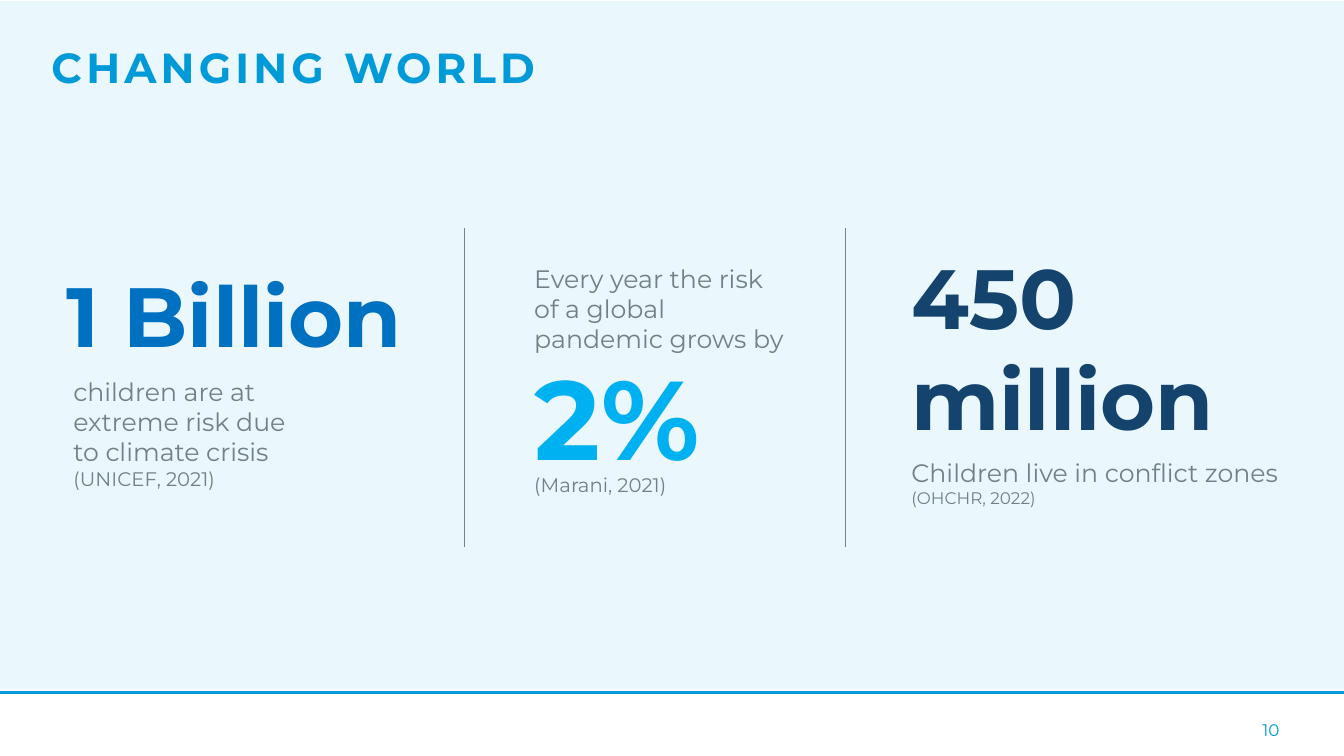
"""Build the Changing World slide with its three key figures."""
from dataclasses import dataclass

import pptx
import pptx.dml.color
import pptx.enum.shapes
import pptx.enum.text
import pptx.oxml.ns
import pptx.shapes.autoshape
import pptx.shapes.connector
import pptx.slide
import pptx.text.text
import pptx.util
from lxml import etree

Inches = pptx.util.Inches
Pt = pptx.util.Pt
RGBColor = pptx.dml.color.RGBColor
Align = pptx.enum.text.PP_ALIGN
Anchor = pptx.enum.text.MSO_ANCHOR

FONT = "Montserrat"
PANEL = RGBColor(0xEA, 0xF7, 0xFC)
ACCENT = RGBColor(0x00, 0x9A, 0xDA)
TITLE = RGBColor(0x00, 0x9A, 0xD9)
GREY = RGBColor(0x72, 0x80, 0x8A)
DIVIDER = RGBColor(0x80, 0x80, 0x80)
BLUE = RGBColor(0x00, 0x70, 0xC0)
NAVY = RGBColor(0x14, 0x44, 0x6D)
SKY = RGBColor(0x00, 0xB1, 0xF1)

SLIDE_WIDTH = 13.33
FOOTER_TOP = 6.87
DIVIDER_TOP, DIVIDER_BOTTOM = 2.26, 5.43
DIVIDER_LEFTS = (4.61, 8.39)


@dataclass(frozen=True)
class Line:
    text: str
    size: float
    color: RGBColor = GREY
    bold: bool = False
    space_before: float = 0


@dataclass(frozen=True)
class Block:
    left: float
    top: float
    width: float
    height: float
    lines: tuple[Line, ...]
    align: Align = Align.LEFT
    anchor: Anchor = Anchor.TOP


HEADING = Block(0.41, 0.36, 12.85, 0.61, (Line("CHANGING WORLD", 30, TITLE, True),))

BLOCKS = (
    Block(0.63, 3.68, 2.74, 1.25, (
        Line("children are at extreme risk due\vto climate crisis", 18),
        Line("(UNICEF, 2021)", 14))),
    Block(0.16, 2.56, 4.33, 1.11, (Line("1 Billion", 60, BLUE, True),),
          Align.CENTER, Anchor.MIDDLE),
    Block(8.94, 4.49, 4.11, 0.61, (
        Line("Children live in conflict zones", 18),
        Line("(OHCHR, 2022)", 12))),
    Block(8.94, 2.38, 3.89, 2.12, (Line("450 million", 60, NAVY, True),),
          anchor=Anchor.MIDDLE),
    Block(5.2, 2.56, 2.72, 2.42, (
        Line("Every year the risk of a global pandemic grows by", 18),
        Line("(Marani, 2021)", 14, space_before=85))),
    Block(4.85, 3.4, 2.54, 1.45, (Line("2%", 80, SKY, True),),
          Align.CENTER, Anchor.MIDDLE),
    Block(9.79, 7.04, 3, 0.4, (Line("10", 12, ACCENT),),
          Align.RIGHT, Anchor.MIDDLE),
)


def fill_frame(frame: pptx.text.text.TextFrame, block: Block) -> None:
    frame.text = "\n".join(line.text for line in block.lines)
    frame.word_wrap = True
    frame.auto_size = pptx.enum.text.MSO_AUTO_SIZE.NONE
    frame.vertical_anchor = block.anchor
    for para, line in zip(frame.paragraphs, block.lines):
        para.alignment = block.align
        para.space_before = Pt(line.space_before)
        for span in para.runs:
            span.font.name = FONT
            span.font.size = Pt(line.size)
            span.font.bold = line.bold
            span.font.color.rgb = line.color


def add_block(page: pptx.slide.Slide, block: Block) -> None:
    box = page.shapes.add_textbox(Inches(block.left), Inches(block.top),
                                  Inches(block.width), Inches(block.height))
    fill_frame(box.text_frame, block)


def set_title(page: pptx.slide.Slide, block: Block) -> None:
    title = page.shapes.title
    title.left, title.top = Inches(block.left), Inches(block.top)
    title.width, title.height = Inches(block.width), Inches(block.height)
    fill_frame(title.text_frame, block)
    for span in title.text_frame.paragraphs[0].runs:
        span._r.get_or_add_rPr().set("spc", "300")


def add_panel(page: pptx.slide.Slide) -> pptx.shapes.autoshape.Shape:
    panel = page.shapes.add_shape(
        pptx.enum.shapes.MSO_SHAPE.RECTANGLE,
        Inches(-0.02), Inches(0.01), Inches(13.35), Inches(6.83))
    panel.shadow.inherit = False
    panel.fill.solid()
    panel.fill.fore_color.rgb = PANEL
    panel.line.fill.background()
    return panel


def add_rule(page: pptx.slide.Slide, start: tuple[float, float],
             end: tuple[float, float], color: RGBColor,
             weight: float) -> pptx.shapes.connector.Connector:
    rule = page.shapes.add_connector(
        pptx.enum.shapes.MSO_CONNECTOR.STRAIGHT,
        *(Inches(value) for value in start + end))
    rule.line.color.rgb = color
    rule.line.width = Pt(weight)
    etree.SubElement(rule._element.spPr, pptx.oxml.ns.qn("a:effectLst"))
    return rule


def main() -> None:
    deck = pptx.Presentation()
    deck.slide_width, deck.slide_height = Inches(SLIDE_WIDTH), Inches(7.5)
    page = deck.slides.add_slide(deck.slide_layouts.get_by_name("Title Only"))
    footer = add_rule(page, (0, FOOTER_TOP), (SLIDE_WIDTH, FOOTER_TOP), ACCENT, 2)
    panel = add_panel(page)
    for position, backdrop in enumerate((footer, panel), start=2):
        page.shapes._spTree.insert(position, backdrop._element)
    set_title(page, HEADING)
    for block in BLOCKS:
        add_block(page, block)
    for left in DIVIDER_LEFTS:
        add_rule(page, (left, DIVIDER_TOP), (left, DIVIDER_BOTTOM), DIVIDER, 0.75)
    deck.save("out.pptx")


if __name__ == "__main__":
    main()
